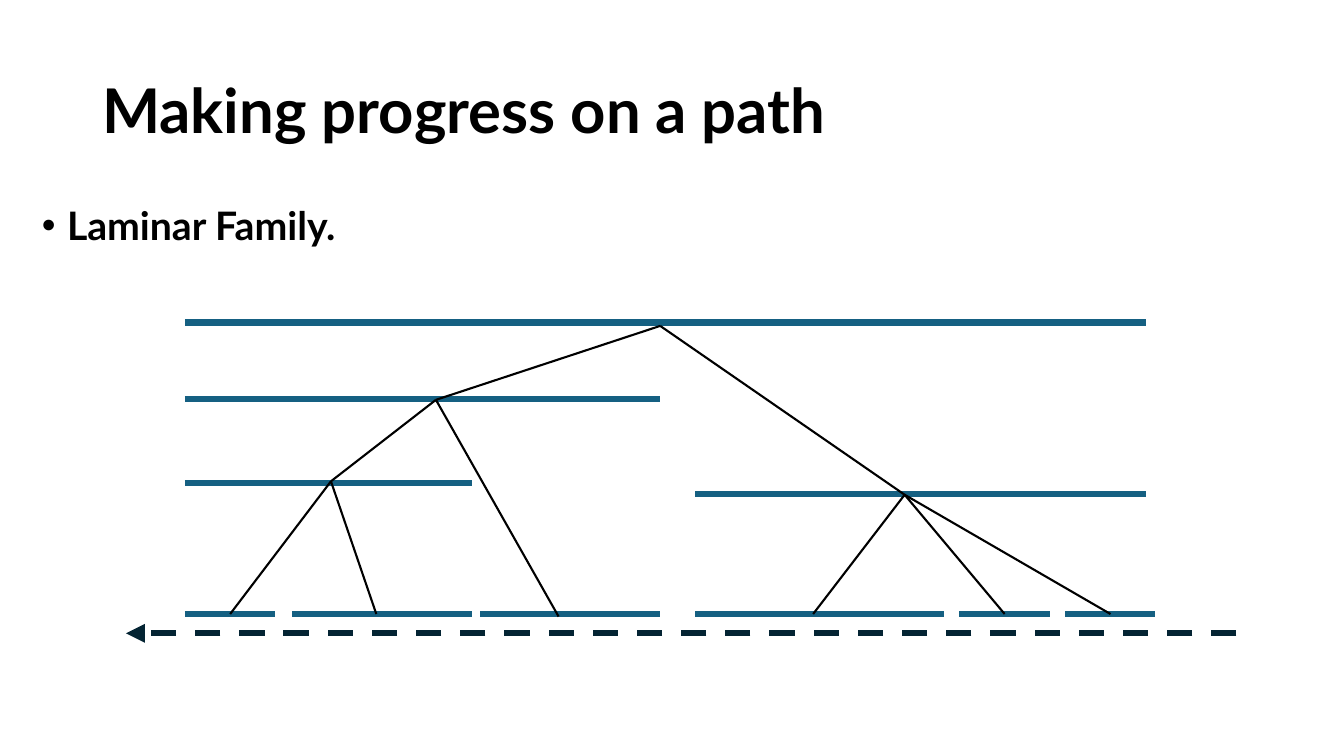
from dataclasses import dataclass
from typing import Optional

from lxml.etree import SubElement
from pptx import Presentation
from pptx.dml.color import RGBColor
from pptx.enum.dml import MSO_LINE_DASH_STYLE as Dash
from pptx.enum.shapes import MSO_CONNECTOR as Connector
from pptx.enum.text import MSO_ANCHOR as Anchor
from pptx.oxml.ns import qn
from pptx.util import Inches, Pt


@dataclass(frozen=True)
class Theme:
    """Colours, font, type sizes and line widths of the slide."""
    font: str = "Lato"
    text: RGBColor = RGBColor(0, 0, 0)
    interval: RGBColor = RGBColor(0x15, 0x60, 0x82)
    path_line: RGBColor = RGBColor(0x04, 0x24, 0x33)
    title_size: Pt = Pt(44)
    body_size: Pt = Pt(28)
    thick: Pt = Pt(4.5)
    thin: Pt = Pt(1.5)


@dataclass(frozen=True)
class Interval:
    """A set of the laminar family, with the point where tree edges meet it."""
    left: float
    right: float
    row: float
    joint: tuple
    parent: Optional[str] = None


THEME = Theme()
WIDTH, HEIGHT = Inches(13.33), Inches(7.5)
COLUMNS, ROWS = 160, 90
LEAF_ROW, PATH_ROW = 73.1, 75.4

FAMILY = {
    "root": Interval(22, 136.4, 38.4, (78.6, 38.8)),
    "left": Interval(22, 78.6, 47.5, (51.9, 47.6), "root"),
    "nested": Interval(22, 56.2, 57.5, (39.4, 57.3), "left"),
    "right": Interval(82.8, 136.4, 58.8, (107.7, 58.9), "root"),
    "leaf 1": Interval(22, 32.8, LEAF_ROW, (27.4, LEAF_ROW), "nested"),
    "leaf 2": Interval(34.8, 56.2, LEAF_ROW, (44.8, LEAF_ROW), "nested"),
    "leaf 3": Interval(57.2, 78.6, LEAF_ROW, (66.5, 73.4), "left"),
    "leaf 4": Interval(82.8, 112.4, LEAF_ROW, (96.8, LEAF_ROW), "right"),
    "leaf 5": Interval(114.2, 125, LEAF_ROW, (119.6, LEAF_ROW), "right"),
    "leaf 6": Interval(126.8, 137.5, LEAF_ROW, (132.2, LEAF_ROW), "right"),
}


def across(columns):
    """Turn grid columns into a length."""
    return round(WIDTH * columns / COLUMNS)


def down(rows):
    """Turn grid rows into a length."""
    return round(HEIGHT * rows / ROWS)


def add_line(slide, start, end, colour, width):
    """Draw a straight line between two grid points."""
    connector = slide.shapes.add_connector(
        Connector.STRAIGHT, across(start[0]), down(start[1]), across(end[0]), down(end[1])
    )
    connector.line.color.rgb = colour
    connector.line.width = width
    SubElement(connector._element.spPr, qn("a:effectLst"))
    return connector


def add_dashed_arrow(slide, start, end):
    """Draw the dashed path with an arrowhead at its end."""
    arrow = add_line(slide, start, end, THEME.path_line, THEME.thick)
    arrow.line.dash_style = Dash.DASH
    SubElement(arrow.line._get_or_add_ln(), qn("a:tailEnd"), type="triangle")


def add_text(slide, text, box, size, anchor):
    """Add a bold paragraph in a grid box and return the paragraph."""
    left, top, width, height = box
    shape = slide.shapes.add_textbox(across(left), down(top), across(width), down(height))
    frame = shape.text_frame
    frame.word_wrap = True
    frame.vertical_anchor = anchor
    paragraph = frame.paragraphs[0]
    paragraph.text = text
    paragraph.line_spacing = 0.9
    paragraph.font.name = THEME.font
    paragraph.font.size = size
    paragraph.font.bold = True
    paragraph.font.color.rgb = THEME.text
    return paragraph


def add_bullet(paragraph):
    """Give a paragraph a round bullet with a hanging indent."""
    paragraph.space_before = Pt(10)
    properties = paragraph._p.get_or_add_pPr()
    properties.set("marL", str(Inches(0.25)))
    properties.set("indent", str(-Inches(0.25)))
    SubElement(properties, qn("a:buFont"), typeface="Arial")
    SubElement(properties, qn("a:buChar"), char="•")
    defaults = properties.find(qn("a:defRPr"))
    if defaults is not None:
        properties.append(defaults)


def add_family(slide, family):
    """Draw every interval, then the edges from parents to children."""
    for interval in family.values():
        add_line(slide, (interval.left, interval.row), (interval.right, interval.row),
                 THEME.interval, THEME.thick)
    for interval in family.values():
        if interval.parent:
            add_line(slide, family[interval.parent].joint, interval.joint,
                     THEME.text, THEME.thin)


def main():
    """Build and save the slide."""
    presentation = Presentation()
    presentation.slide_width, presentation.slide_height = WIDTH, HEIGHT
    slide = presentation.slides.add_slide(presentation.slide_layouts[6])
    add_dashed_arrow(slide, (147.2, PATH_ROW), (15, PATH_ROW))
    add_text(slide, "Making progress on a path", (11, 4.8, 138, 17.4),
             THEME.title_size, Anchor.MIDDLE)
    add_bullet(add_text(slide, "Laminar Family.", (3.8, 24, 150, 66),
                        THEME.body_size, Anchor.TOP))
    add_family(slide, FAMILY)
    presentation.save("out.pptx")


if __name__ == "__main__":
    main()
